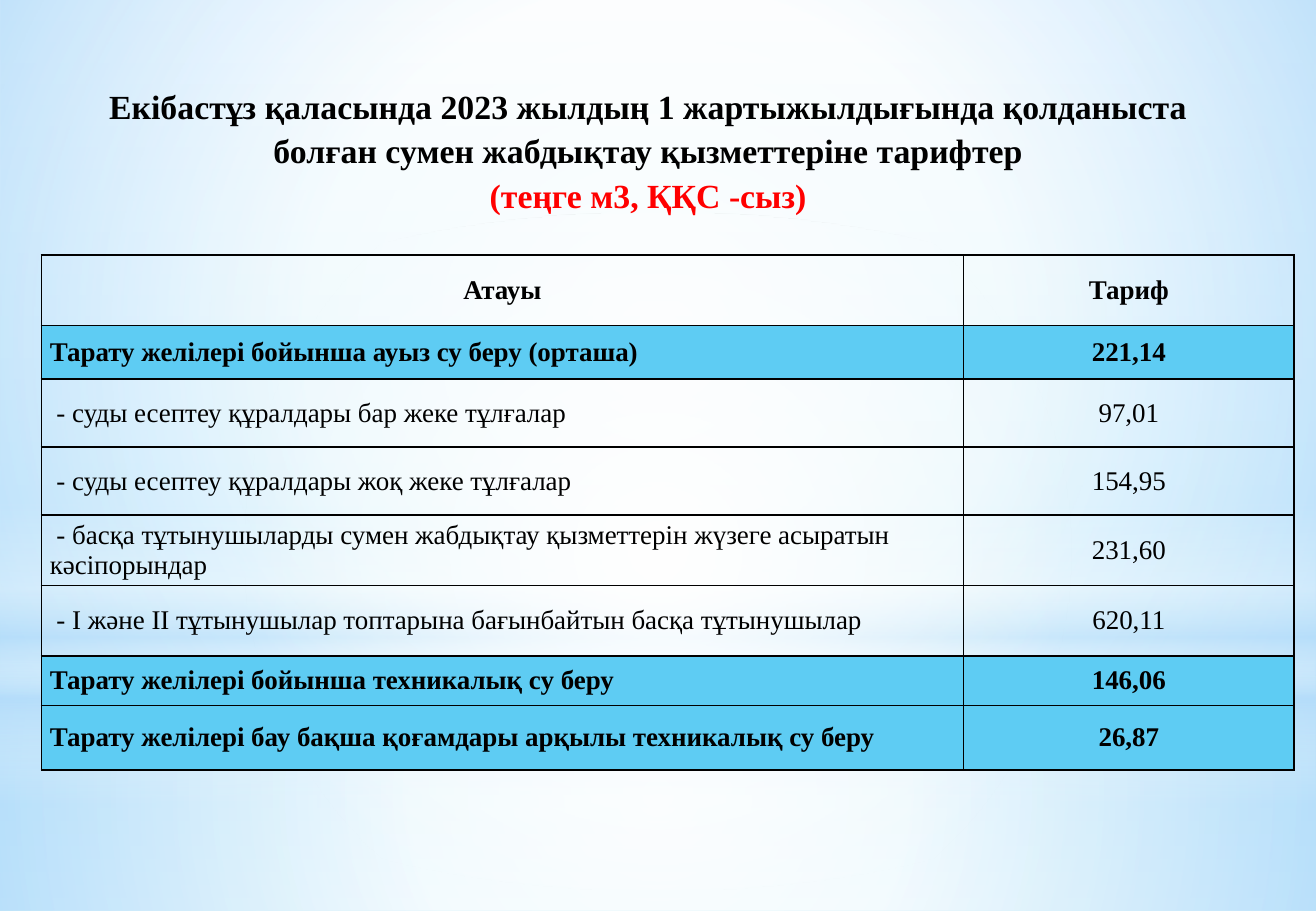
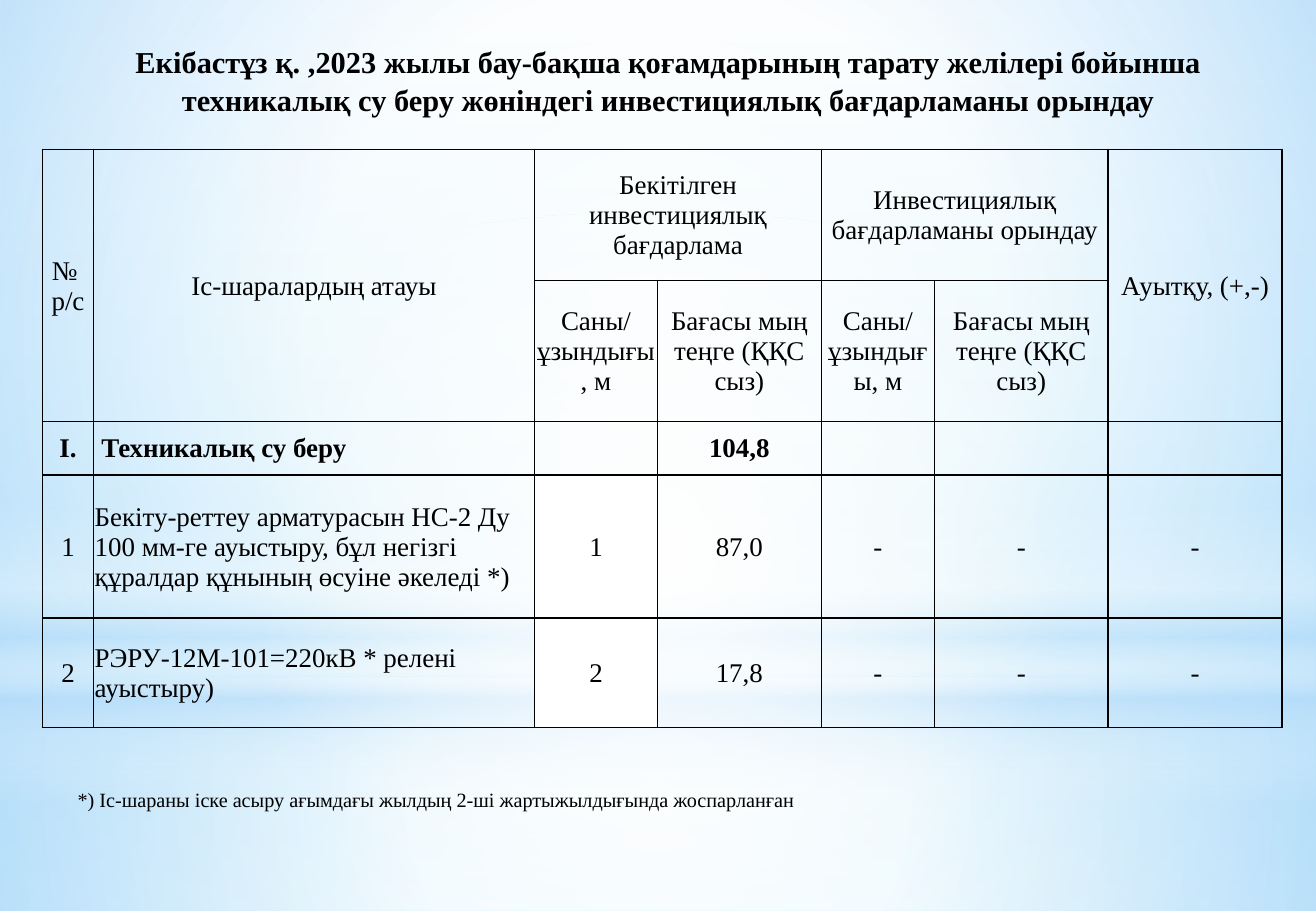
"""Builds two slides on water supply tariffs and the investment programme."""
from dataclasses import dataclass

from lxml.etree import SubElement
from pptx import Presentation
from pptx.dml.color import RGBColor
from pptx.enum.shapes import MSO_SHAPE
from pptx.enum.text import MSO_ANCHOR, PP_ALIGN
from pptx.oxml import parse_xml
from pptx.oxml.ns import nsdecls, qn
from pptx.util import Inches, Pt


@dataclass(frozen=True)
class Theme:
    font: str = "Times New Roman"
    ink: str = "000000"
    alert: str = "FF0000"
    accent: str = "5ECCF3"
    white: str = "FFFFFF"
    mist: str = "B4DCFA"
    sky: tuple = ((0, "F7FCFE", 100), (74, "B7E8FA", 100),
                  (83, "B7E8FA", 100), (100, "CFF0FB", 100))
    large_title: int = 20
    title: int = 18
    body: int = 16
    note: int = 12
    border: float = 1
    cell: float = 0.1
    columns: float = 108.3
    rows: float = 75


class Deck:
    def __init__(self, theme):
        self.theme = theme
        self.deck = Presentation()
        self.deck.slide_width = self.units(theme.columns)
        self.deck.slide_height = self.units(theme.rows)
        self.page = None

    def units(self, count):
        return Inches(count * self.theme.cell)

    def place(self, *counts):
        return [self.units(count) for count in counts]

    def new_page(self):
        theme = self.theme
        white, mist, wide = theme.white, theme.mist, theme.columns
        self.page = self.deck.slides.add_slide(self.deck.slide_layouts[6])
        self.page.background.fill.gradient()
        self.blend(self.page.element.find(".//" + qn("p:bgPr")), theme.sky)
        rectangle = MSO_SHAPE.RECTANGLE
        self.glow(rectangle, (0, 55.8, wide, 19.2),
                  ((0, white, 91), (37, white, 76), (100, mist, 79)))
        self.glow(rectangle, (0, 0, wide, 55.8),
                  ((0, white, 89), (48, white, 62), (100, mist, 79)))
        self.glow(rectangle, (0, 41.2, wide, 25),
                  ((0, white, 0), (29, white, 30), (45, mist, 40),
                   (55, white, 26), (65, mist, 60), (100, white, 0)), radial=False)
        self.glow(MSO_SHAPE.OVAL, (0, 17.5, wide, 55.8),
                  ((0, white, 100), (56, white, 0)))

    def blend(self, holder, stops, radial=False):
        marks = "".join(
            f'<a:gs pos="{position * 1000}"><a:srgbClr val="{color}">'
            f'<a:alpha val="{opacity * 1000}"/></a:srgbClr></a:gs>'
            for position, color, opacity in stops)
        course = ('<a:path path="circle"><a:fillToRect l="50000" t="50000" '
                  'r="50000" b="50000"/></a:path>'
                  if radial else '<a:lin ang="5400000" scaled="0"/>')
        gradient = parse_xml(f'<a:gradFill {nsdecls("a")} rotWithShape="1">'
                             f'<a:gsLst>{marks}</a:gsLst>{course}</a:gradFill>')
        holder.replace(holder.find(qn("a:gradFill")), gradient)

    def glow(self, kind, area, stops, radial=True):
        shape = self.page.shapes.add_shape(kind, *self.place(*area))
        shape.shadow.inherit = False
        shape.line.fill.background()
        shape.fill.gradient()
        self.blend(shape.element.spPr, stops, radial)

    def style(self, paragraph, size, bold=False, color=None, align=PP_ALIGN.CENTER):
        paragraph.alignment = align
        font = paragraph.font
        font.name, font.size, font.bold = self.theme.font, Pt(size), bold
        font.color.rgb = RGBColor.from_string(color or self.theme.ink)

    def text_box(self, area):
        frame = self.page.shapes.add_textbox(*self.place(*area)).text_frame
        frame.word_wrap = True
        return frame

    def title(self, area, lines, size, spacing=1.0):
        frame = self.text_box(area)
        frame.margin_top = self.units(0.7)
        for index, (text, color) in enumerate(lines):
            paragraph = frame.add_paragraph() if index else frame.paragraphs[0]
            paragraph.text = text
            paragraph.line_spacing = spacing
            self.style(paragraph, size, True, color)

    def note(self, area, text, indent):
        paragraph = self.text_box(area).paragraphs[0]
        paragraph.text = text
        self.style(paragraph, self.theme.note, align=PP_ALIGN.LEFT)
        paragraph._p.get_or_add_pPr().set("marL", str(self.units(indent)))

    def outline(self, cell):
        properties = cell._tc.get_or_add_tcPr()
        for index, side in enumerate(("a:lnL", "a:lnR", "a:lnT", "a:lnB")):
            line = SubElement(properties, qn(side), w=str(Pt(self.theme.border)))
            fill = SubElement(line, qn("a:solidFill"))
            SubElement(fill, qn("a:srgbClr"), val=self.theme.ink)
            properties.insert(index, line)

    def table(self, corner, widths, heights, rows, margins, bold_rows,
              left_column, header_rows=1, fills=None, merges=()):
        area = self.place(*corner, sum(widths), sum(heights))
        table = self.page.shapes.add_table(len(rows), len(widths), *area).table
        table.first_row = table.horz_banding = False
        for column, width in zip(table.columns, widths):
            column.width = self.units(width)
        for row, height in zip(table.rows, heights):
            row.height = self.units(height)
        for row, texts in enumerate(rows):
            for column, text in enumerate(texts):
                cell = table.cell(row, column)
                cell.text = text
                cell.vertical_anchor = MSO_ANCHOR.MIDDLE
                (cell.margin_left, cell.margin_top,
                 cell.margin_right, cell.margin_bottom) = self.place(*margins)
                left = column == left_column and row >= header_rows
                for paragraph in cell.text_frame.paragraphs:
                    self.style(paragraph, self.theme.body, row in bold_rows,
                               align=PP_ALIGN.LEFT if left else PP_ALIGN.CENTER)
                color = (fills or {}).get((row, column))
                if color:
                    cell.fill.solid()
                    cell.fill.fore_color.rgb = RGBColor.from_string(color)
                else:
                    cell.fill.background()
                self.outline(cell)
        for first, last in merges:
            table.cell(*first).merge(table.cell(*last))


def tariffs(deck):
    theme = deck.theme
    deck.new_page()
    deck.title((4.5, 6, 97.7, 13.4), (
        ("Екібастұз қаласында 2023 жылдың 1 жартыжылдығында қолданыста "
         "болған сумен жабдықтау қызметтеріне тарифтер", theme.ink),
        ("(теңге м3, ҚҚС -сыз)", theme.alert)), theme.large_title, 1.1)
    totals = (1, 6, 7)
    deck.table(
        (3.4, 21), (75.9, 27.2), (5.8, 4.4, 5.6, 5.6, 5.8, 5.8, 4.1, 5.3),
        (("Атауы", "Тариф"),
         ("Тарату желілері бойынша ауыз су беру (орташа)", "221,14"),
         (" - суды есептеу құралдары бар жеке тұлғалар", "97,01"),
         (" - суды есептеу құралдары жоқ жеке тұлғалар", "154,95"),
         (" - басқа тұтынушыларды сумен жабдықтау қызметтерін жүзеге асыратын "
          "кәсіпорындар", "231,60"),
         (" - I және II тұтынушылар топтарына бағынбайтын басқа тұтынушылар", "620,11"),
         ("Тарату желілері бойынша техникалық су беру", "146,06"),
         ("Тарату желілері бау бақша қоғамдары арқылы техникалық су беру", "26,87")),
        margins=(0.7, 0, 0.7, 0), bold_rows=(0, *totals), left_column=0,
        fills={(row, column): theme.accent for row in totals for column in (0, 1)})


def investments(deck):
    theme = deck.theme
    deck.new_page()
    deck.title((3.8, 2.8, 102.4, 13.4), (
        ("Екібастұз қ. ,2023 жылы бау-бақша қоғамдарының тарату желілері бойынша "
         "техникалық су беру жөніндегі инвестициялық бағдарламаны орындау",
         theme.ink),), theme.title, 1.03)
    measures = ("Саны/ ұзындығы, м", "Бағасы мың теңге (ҚҚС сыз)")
    deck.table(
        (3.5, 12.3), (4.2, 36.3, 10.1, 13.5, 9.3, 14.3, 14.3),
        (10.8, 11.6, 4.4, 11.8, 9),
        (("№ \nр/с", "Іс-шаралардың атауы", "Бекітілген инвестициялық бағдарлама", "",
          "Инвестициялық бағдарламаны орындау", "", "Ауытқу, (+,-)"),
         ("", "", *measures, *measures, ""),
         ("I.", " Техникалық су беру", "", "104,8", "", "", ""),
         ("1", "Бекіту-реттеу арматурасын НС-2 Ду 100 мм-ге ауыстыру, бұл негізгі "
          "құралдар құнының өсуіне әкеледі *)", "1", "87,0", "-", "-", "-"),
         ("2", "РЭРУ-12М-101=220кВ * релені ауыстыру)", "2", "17,8", "-", "-", "-")),
        margins=(0.1, 0.1, 0.1, 0), bold_rows=(2,), left_column=1, header_rows=2,
        fills={(row, 2): theme.white for row in (3, 4)},
        merges=[((0, column), (1, column)) for column in (0, 1, 6)]
        + [((0, column), (0, column + 1)) for column in (2, 4)])
    deck.note((3.8, 64.3, 103, 3),
              "*) Іс-шараны іске асыру ағымдағы жылдың 2-ші жартыжылдығында жоспарланған",
              indent=1.6)


def main():
    deck = Deck(Theme())
    tariffs(deck)
    investments(deck)
    deck.deck.save("out.pptx")


if __name__ == "__main__":
    main()
